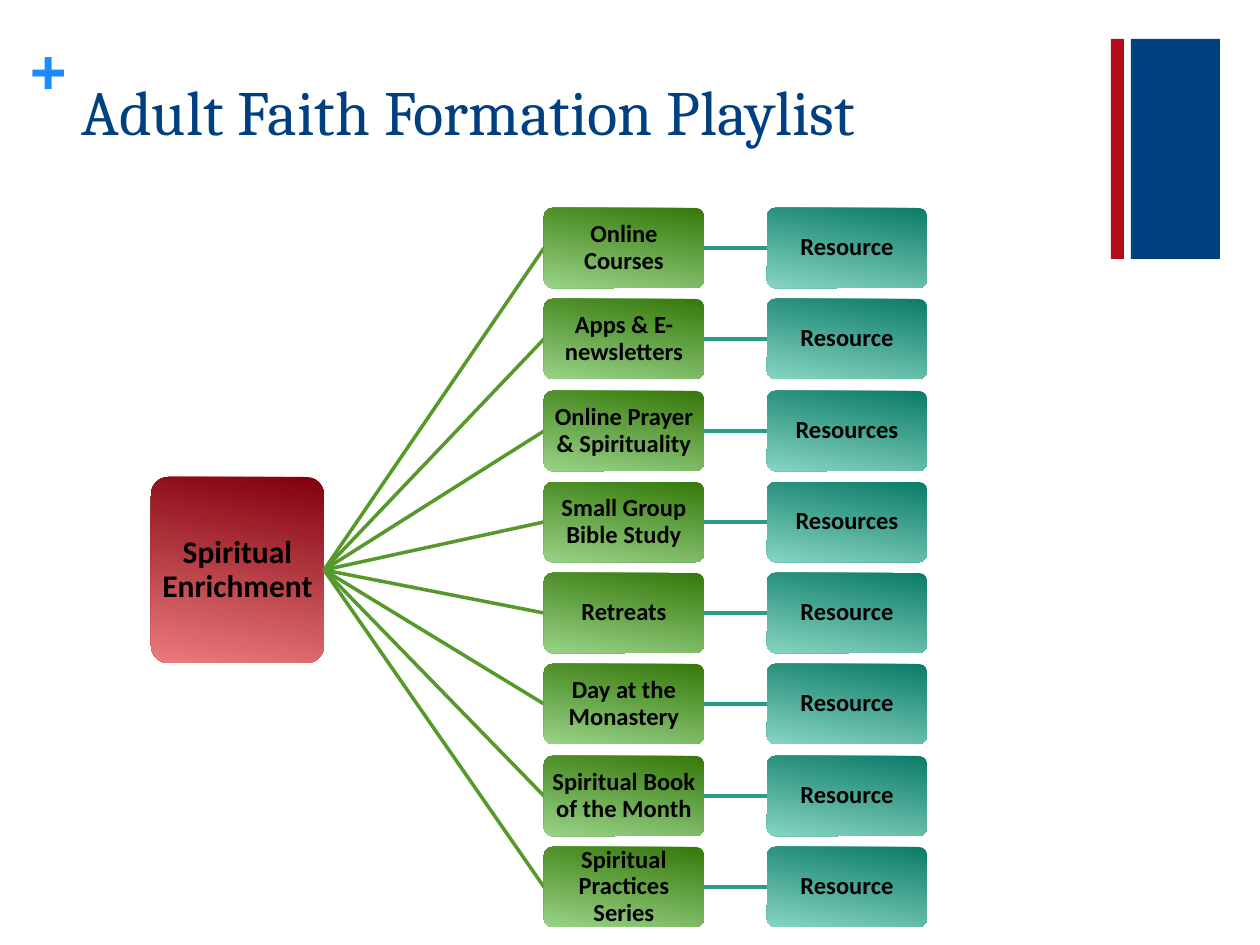
from dataclasses import dataclass

from lxml.etree import SubElement
from pptx import Presentation
from pptx.dml.color import RGBColor
from pptx.enum.shapes import MSO_CONNECTOR, MSO_SHAPE
from pptx.enum.text import MSO_ANCHOR, PP_ALIGN
from pptx.oxml.ns import qn
from pptx.util import Pt

PX = 914400 / 126


@dataclass(frozen=True)
class Theme:
    navy: str = "004080"
    red: str = "B50B1B"
    plus: str = "1A8CFF"
    ink: str = "000000"
    topic_grad: tuple = ("81000C", "EB7B7D")
    category_grad: tuple = ("35790A", "99D287")
    resource_grad: tuple = ("0B7C68", "86D4C1")
    branch: str = "55992B"
    link: str = "2C9C89"
    title_font: str = "Cambria"
    body_font: str = "Calibri"
    plus_font: str = "Arial"
    title_size: int = 36
    topic_size: int = 18
    node_size: int = 14


T = Theme()

PLAYLIST = [
    ("Online Courses", "Resource"),
    ("Apps & E-newsletters", "Resource"),
    ("Online Prayer & Spirituality", "Resources"),
    ("Small Group Bible Study", "Resources"),
    ("Retreats", "Resource"),
    ("Day at the Monastery", "Resource"),
    ("Spiritual Book of the Month", "Resource"),
    ("Spiritual Practices Series", "Resource"),
]


def emu(*lengths):
    return [round(n * PX) for n in lengths]


def write(sp, text, *, size, font, color, bold=False, align=PP_ALIGN.LEFT,
          anchor=MSO_ANCHOR.TOP, margins=(0, 0), spacing=1.0, wrap=True):
    tf = sp.text_frame
    tf.word_wrap = wrap
    tf.vertical_anchor = anchor
    tf.margin_left, tf.margin_top = emu(*margins)
    tf.margin_right, tf.margin_bottom = emu(*margins)
    p = tf.paragraphs[0]
    p.alignment = align
    p.line_spacing = spacing
    r = p.add_run()
    r.text = text
    r.font.size = Pt(size)
    r.font.name = font
    r.font.bold = bold
    r.font.color.rgb = RGBColor.from_string(color)


def bar(s, box, color):
    sp = s.shapes.add_shape(MSO_SHAPE.RECTANGLE, *emu(*box))
    sp.shadow.inherit = False
    sp.fill.solid()
    sp.fill.fore_color.rgb = RGBColor.from_string(color)
    sp.line.fill.background()


def node(s, box, text, grad, size):
    sp = s.shapes.add_shape(MSO_SHAPE.ROUNDED_RECTANGLE, *emu(*box))
    sp.adjustments[0] = 0.1
    sp.shadow.inherit = False
    sp.line.fill.background()
    sp.fill.gradient()
    sp.fill.gradient_angle = 260
    for stop, color in zip(sp.fill.gradient_stops, grad):
        stop.color.rgb = RGBColor.from_string(color)
    write(sp, text, size=size, font=T.body_font, color=T.ink, bold=True,
          align=PP_ALIGN.CENTER, anchor=MSO_ANCHOR.MIDDLE, margins=(4, 4),
          spacing=0.9)


def connect(s, start, end, color):
    cn = s.shapes.add_connector(MSO_CONNECTOR.STRAIGHT, *emu(*start, *end))
    cn.line.width = Pt(2)
    cn.line.color.rgb = RGBColor.from_string(color)
    SubElement(cn._element.spPr, qn("a:effectLst"))


def corner_bars(s, box):
    """Thin red bar and wide navy block, side by side."""
    x, y, w, h = box
    bar(s, (x + 20, y, w - 20, h), T.navy)
    bar(s, (x, y, 13, h), T.red)


def heading(s, box, text):
    x, y, w, h = box
    plus = s.shapes.add_textbox(*emu(x, y, 37, 77))
    write(plus, "+", size=T.title_size, font=T.plus_font, color=T.plus,
          bold=True, wrap=False)
    title = s.shapes.add_textbox(*emu(x + 39, y + 35, w - 39, h - 35))
    write(title, text, size=T.title_size, font=T.title_font, color=T.navy,
          margins=(13, 6))


def playlist_tree(s, box, topic, rows):
    """Topic on the left, branching to one category and resource per row."""
    x, y, w, h = box
    topic_w, topic_h, node_w, node_h = 173, 186, 160, 80
    resource_x = x + w - node_w
    category_x = resource_x - 223
    pitch = (h - node_h) / (len(rows) - 1)
    # The topic centre sits a little below the centre of the rows.
    hub = (x + topic_w, y + h // 2 + 3)
    node(s, (x, hub[1] - topic_h // 2, topic_w, topic_h), topic,
         T.topic_grad, T.topic_size)
    for i, (category, resource) in enumerate(rows):
        top = y + round(i * pitch)
        mid = top + node_h // 2
        connect(s, hub, (category_x, mid), T.branch)
        connect(s, (category_x + node_w, mid), (resource_x, mid), T.link)
        node(s, (category_x, top, node_w, node_h), category,
             T.category_grad, T.node_size)
        node(s, (resource_x, top, node_w, node_h), resource,
             T.resource_grad, T.node_size)


def main():
    prs = Presentation()
    prs.slide_width, prs.slide_height = emu(1260, 945)
    s = prs.slides.add_slide(prs.slide_layouts[6])
    corner_bars(s, (1111, 39, 109, 220))
    heading(s, (30, 32, 1080, 189), "Adult Faith Formation Playlist")
    playlist_tree(s, (151, 208, 776, 719), "Spiritual Enrichment", PLAYLIST)
    prs.save("out.pptx")


if __name__ == "__main__":
    main()
